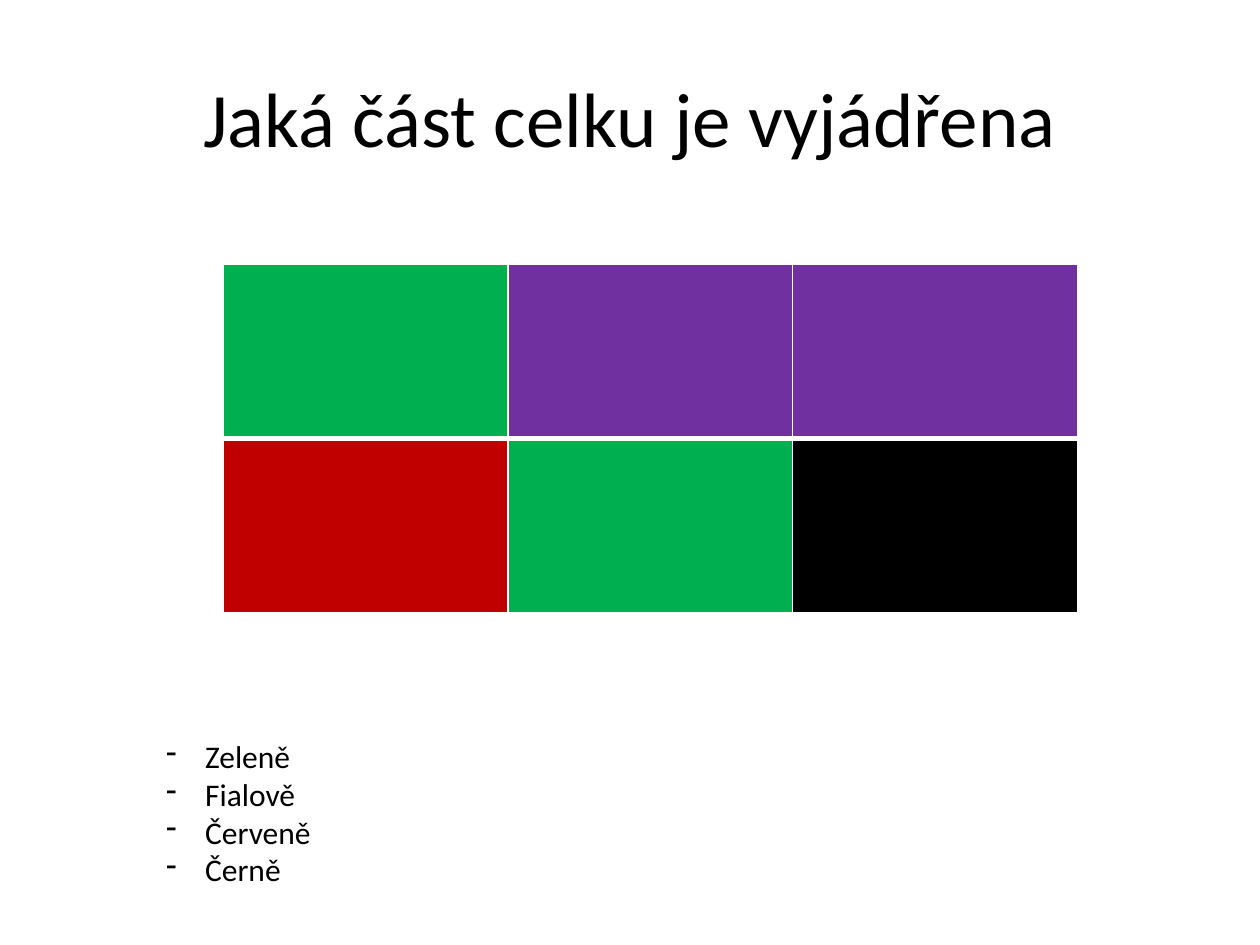
from dataclasses import dataclass

from pptx import Presentation
from pptx.dml.color import RGBColor
from pptx.enum import text
from pptx.oxml import xmlchemy
from pptx.util import Inches, Pt


@dataclass(frozen=True)
class Theme:
    font: str = "Calibri"
    ink: str = "000000"
    rule: str = "FFFFFF"
    green: str = "00B050"
    violet: str = "7030A0"
    red: str = "C00000"
    black: str = "000000"
    title_size: int = 44
    list_size: int = 18
    thin: int = 1
    thick: int = 3


THEME = Theme()
PARTS = [[THEME.green, THEME.violet, THEME.violet],
         [THEME.red, THEME.green, THEME.black]]
COLOUR_NAMES = ["Zeleně", "Fialově", "Červeně", "Černě"]


def add_element(parent, tag, **attributes):
    element = xmlchemy.OxmlElement(tag)
    for name, value in attributes.items():
        element.set(name, str(value))
    parent.append(element)
    return element


def format_paragraph(para, size):
    for span in para.runs:
        span.font.name = THEME.font
        span.font.size = Pt(size)
        span.font.color.rgb = RGBColor.from_string(THEME.ink)


def place_title(page, box, wording):
    title = page.shapes.title
    title.left, title.top, title.width, title.height = map(Inches, box)
    frame = title.text_frame
    frame.text = wording
    frame.vertical_anchor = text.MSO_ANCHOR.MIDDLE
    para = frame.paragraphs[0]
    para.alignment = text.PP_ALIGN.CENTER
    format_paragraph(para, THEME.title_size)


def paint_cell(cell, colour, top, bottom):
    # Borders come before the fill in the cell properties
    properties = cell._tc.get_or_add_tcPr()
    for side, width in dict(L=THEME.thin, R=THEME.thin, T=top, B=bottom).items():
        line = add_element(properties, f"a:ln{side}", w=Pt(width))
        fill = add_element(line, "a:solidFill")
        add_element(fill, "a:srgbClr", val=THEME.rule)
    cell.fill.solid()
    cell.fill.fore_color.rgb = RGBColor.from_string(colour)


def place_parts(page, box, colours):
    rows, columns = len(colours), len(colours[0])
    table = page.shapes.add_table(rows, columns, *map(Inches, box)).table
    for row, row_colours in enumerate(colours):
        # A thick rule separates the first row from the rest
        top = THEME.thick if row == 1 else THEME.thin
        bottom = THEME.thick if row == 0 else THEME.thin
        for column, colour in enumerate(row_colours):
            paint_cell(table.cell(row, column), colour, top, bottom)


def place_list(page, box, entries):
    frame = page.shapes.add_textbox(*map(Inches, box)).text_frame
    frame.word_wrap = False
    frame.auto_size = text.MSO_AUTO_SIZE.SHAPE_TO_FIT_TEXT
    frame.text = "\n".join(entries)
    indent = Inches(0.31)
    for para in frame.paragraphs:
        format_paragraph(para, THEME.list_size)
        properties = para._p.get_or_add_pPr()
        properties.set("marL", str(indent))
        properties.set("indent", str(-indent))
        add_element(properties, "a:buFontTx")
        add_element(properties, "a:buChar", char="-")


def main():
    deck = Presentation()
    width, height = 10, 7.5
    deck.slide_width, deck.slide_height = Inches(width), Inches(height)
    page = deck.slides.add_slide(deck.slide_layouts.get_by_name("Title Only"))

    # Question, coloured whole, and the parts to name
    place_title(page, (0.05 * width, 0.04 * height, 0.9 * width, height / 6),
                "Jaká část celku je vyjádřena")
    place_parts(page, (1.77, 0.28 * height, 3 * 2.26, 2 * 1.38), PARTS)
    place_list(page, (1.22, 5.8, 1.37, 1.62), COLOUR_NAMES)

    deck.save("out.pptx")


if __name__ == "__main__":
    main()
